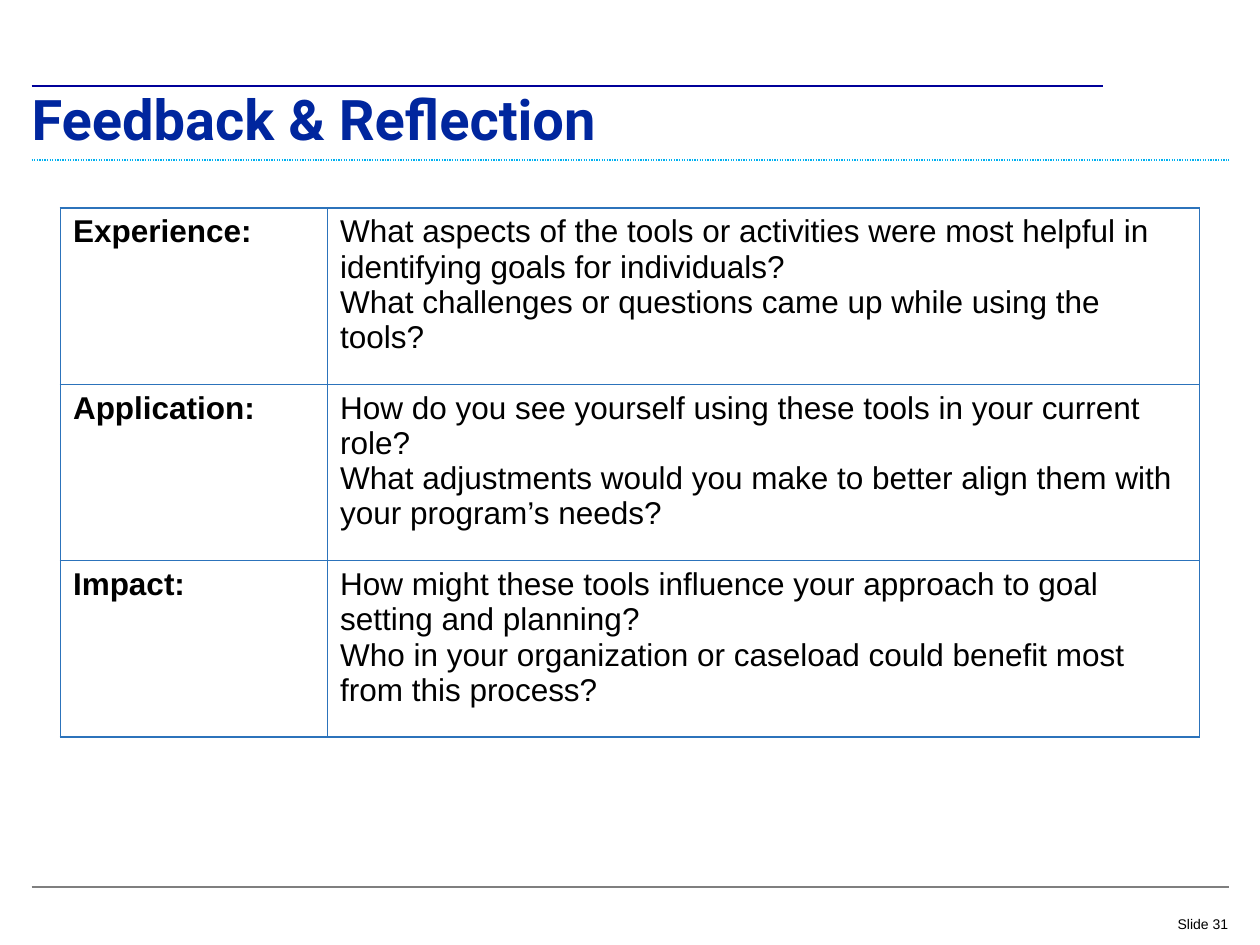
"""Build the feedback and reflection slide with its table of questions."""
from dataclasses import dataclass

from lxml import etree
from pptx import Presentation
from pptx.dml.color import RGBColor
from pptx.enum.dml import MSO_LINE
from pptx.enum.shapes import MSO_CONNECTOR
from pptx.enum.text import MSO_ANCHOR, MSO_AUTO_SIZE, PP_ALIGN
from pptx.oxml.ns import qn
from pptx.util import Inches, Pt

STRAIGHT = MSO_CONNECTOR.STRAIGHT
DOTS = MSO_LINE.ROUND_DOT
MIDDLE = MSO_ANCHOR.MIDDLE
LEFT, RIGHT = PP_ALIGN.LEFT, PP_ALIGN.RIGHT
NO_FIT = MSO_AUTO_SIZE.NONE


@dataclass(frozen=True)
class Theme:
    head_font: str = "Roboto"
    body_font: str = "Arial"
    head: str = "00269E"
    text: str = "000000"
    top: str = "000099"
    dots: str = "00B0F0"
    foot: str = "7F7F7F"
    border: str = "2C73BB"
    head_size: int = 32
    body_size: int = 18
    foot_size: int = 8


@dataclass(frozen=True)
class Rule:
    y: float
    end: float
    color: str
    width: float
    dash: object = None


@dataclass(frozen=True)
class Topic:
    label: str
    asks: tuple[str, ...]


THEME = Theme()
MARGIN = 0.25
COLS = (2.12, 6.92)
ROW = 1.4
RULES = (
    Rule(0.68, 8.75, THEME.top, 1),
    Rule(1.27, 9.75, THEME.dots, 0.75, DOTS),
    Rule(7.04, 9.75, THEME.foot, 0.75),
)
TOPICS = (
    Topic("Experience:", (
        "What aspects of the tools or activities were most helpful in identifying goals for individuals?",
        "What challenges or questions came up while using the tools?",
    )),
    Topic("Application:", (
        "How do you see yourself using these tools in your current role?",
        "What adjustments would you make to better align them with your program’s needs?",
    )),
    Topic("Impact:", (
        "How might these tools influence your approach to goal setting and planning?",
        "Who in your organization or caseload could benefit most from this process?",
    )),
)


def style(para, font: str, size: int, color: str, bold: bool = False) -> None:
    """Set the font of a whole paragraph."""
    para.font.name = font
    para.font.size = Pt(size)
    para.font.bold = bold
    para.font.color.rgb = RGBColor.from_string(color)


def set_frame(frame) -> None:
    """Give a text frame no insets, wrapped text and a middle anchor."""
    frame.margin_left = frame.margin_right = 0
    frame.margin_top = frame.margin_bottom = 0
    frame.word_wrap = True
    frame.auto_size = NO_FIT
    frame.vertical_anchor = MIDDLE


def draw_rule(slide, rule: Rule) -> None:
    """Draw one level line from the left margin."""
    line = slide.shapes.add_connector(
        STRAIGHT, Inches(MARGIN), Inches(rule.y), Inches(rule.end), Inches(rule.y))
    line.line.color.rgb = RGBColor.from_string(rule.color)
    line.line.width = Pt(rule.width)
    if rule.dash:
        line.line.dash_style = rule.dash
    etree.SubElement(line._element.spPr, qn("a:effectLst"))


def draw_title(slide, text: str) -> None:
    """Place and format the title."""
    title = slide.shapes.title
    title.left, title.top = Inches(MARGIN), Inches(0.72)
    title.width, title.height = Inches(8.5), Inches(0.5)
    frame = title.text_frame
    frame.text = text
    set_frame(frame)
    para = frame.paragraphs[0]
    para.alignment = LEFT
    para.line_spacing = 0.9
    style(para, THEME.head_font, THEME.head_size, THEME.head, True)


def draw_number(slide, text: str) -> None:
    """Write the slide number at the lower right."""
    box = slide.shapes.add_textbox(Inches(7.75), Inches(7.23), Inches(2), Inches(0.2))
    frame = box.text_frame
    frame.text = text
    set_frame(frame)
    para = frame.paragraphs[0]
    para.alignment = RIGHT
    style(para, THEME.body_font, THEME.foot_size, THEME.text)


def set_border(cell) -> None:
    """Draw all four sides of a cell."""
    props = cell._tc.get_or_add_tcPr()
    for index, side in enumerate(("lnL", "lnR", "lnT", "lnB")):
        line = etree.Element(qn(f"a:{side}"), w=str(Pt(1)))
        fill = etree.SubElement(line, qn("a:solidFill"))
        etree.SubElement(fill, qn("a:srgbClr"), val=THEME.border)
        props.insert(index, line)


def fill_cell(cell, lines: tuple[str, ...], bold: bool) -> None:
    """Write one paragraph per line into a bordered, clear cell."""
    cell.fill.background()
    set_border(cell)
    cell.text = "\n".join(lines)
    for para in cell.text_frame.paragraphs:
        style(para, THEME.body_font, THEME.body_size, THEME.text, bold)


def draw_table(slide, topics: tuple[Topic, ...]) -> None:
    """Draw a row of label and questions for each topic."""
    table = slide.shapes.add_table(
        len(topics), len(COLS), Inches(0.48), Inches(1.65),
        Inches(sum(COLS)), Inches(ROW * len(topics))).table
    table.first_row = table.horz_banding = False
    for col, width in zip(table.columns, COLS):
        col.width = Inches(width)
    for row, topic in zip(table.rows, topics):
        row.height = Inches(ROW)
        fill_cell(row.cells[0], (topic.label,), True)
        fill_cell(row.cells[1], topic.asks, False)


def main() -> None:
    """Build and save the slide."""
    deck = Presentation()
    deck.slide_width, deck.slide_height = Inches(10), Inches(7.5)
    slide = deck.slides.add_slide(deck.slide_layouts[5])
    for rule in RULES:
        draw_rule(slide, rule)
    draw_number(slide, "Slide 31")
    draw_title(slide, "Feedback & Reflection")
    draw_table(slide, TOPICS)
    deck.save("out.pptx")


if __name__ == "__main__":
    main()
